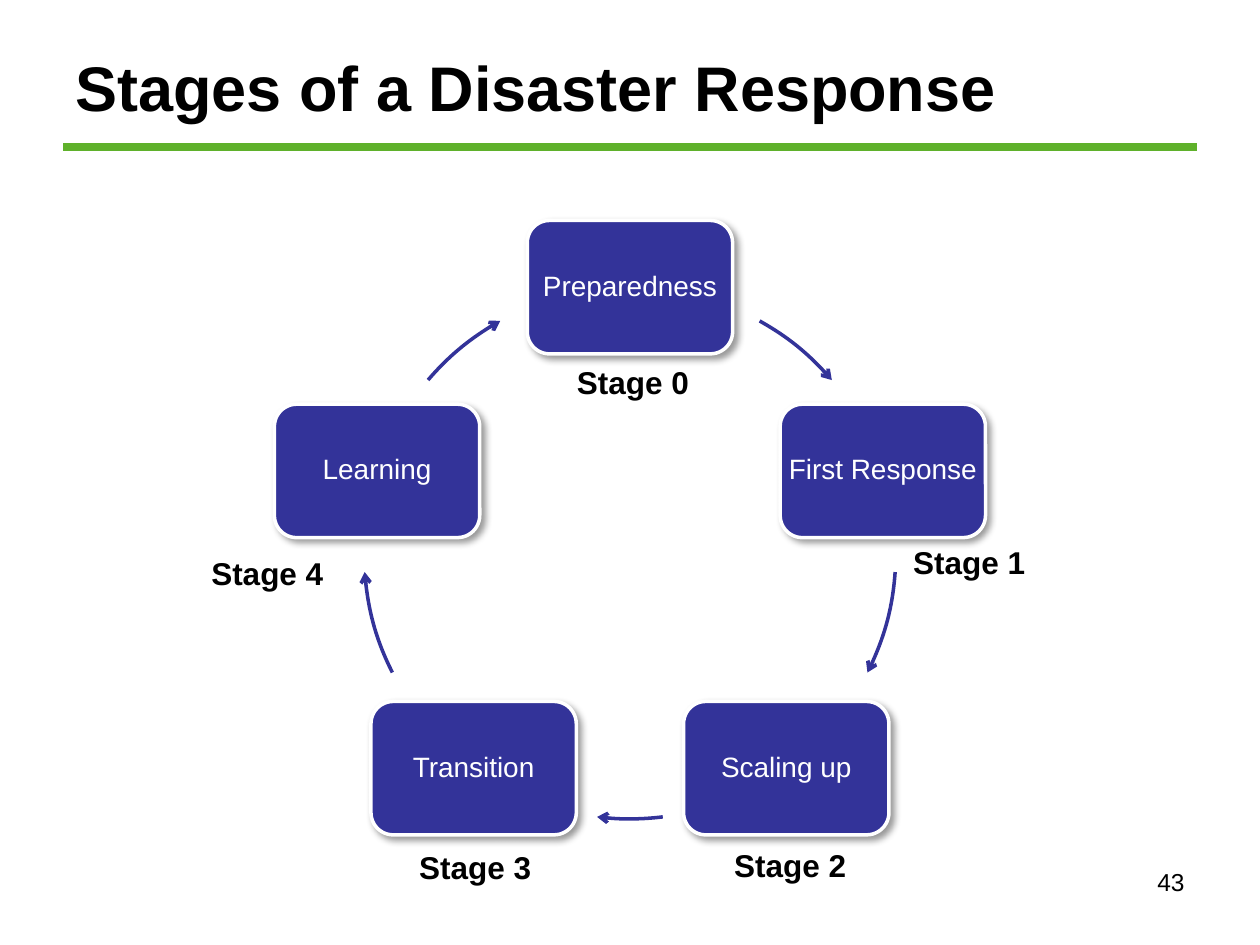
from math import cos, radians, sin

from lxml import etree
from pptx import Presentation
from pptx.dml.color import RGBColor
from pptx.enum.shapes import MSO_CONNECTOR, MSO_SHAPE
from pptx.enum.text import MSO_ANCHOR as ANCHOR, PP_ALIGN as ALIGN
from pptx.oxml import parse_xml
from pptx.oxml.ns import nsdecls, qn
from pptx.util import Cm, Pt

BLUE, GREEN, WHITE, BLACK = "333399", "5FB12B", "FFFFFF", "000000"
SHADOW = (
    f'<a:effectLst {nsdecls("a")}><a:outerShdw blurRad="{Pt(4)}" dist="{Pt(3)}" '
    'dir="2700000" rotWithShape="0"><a:srgbClr val="000000"><a:alpha val="40000"/>'
    "</a:srgbClr></a:outerShdw></a:effectLst>"
)


def rgb(color):
    return RGBColor.from_string(color)


def write(sp, text, size, color=BLACK, bold=False, align=ALIGN.LEFT):
    """Fill a shape with one Arial paragraph and return that paragraph."""
    p = sp.text_frame.paragraphs[0]
    p.text = text
    p.alignment = align
    p.font.name, p.font.size, p.font.bold = "Arial", Pt(size), bold
    p.font.color.rgb = rgb(color)
    return p


prs = Presentation()
prs.slide_width, prs.slide_height = Cm(25.4), Cm(19.05)
s = prs.slides.add_slide(prs.slide_layouts[6])

# Title and rule
title = s.shapes.add_textbox(Cm(1.27), Cm(0.76), Cm(22.66), Cm(1.98))
title.text_frame.word_wrap = True
title.text_frame.vertical_anchor = ANCHOR.MIDDLE
write(title, "Stages of a Disaster Response", 36, bold=True)

rule = s.shapes.add_connector(
    MSO_CONNECTOR.STRAIGHT, Cm(1.27), Cm(2.97), Cm(24.13), Cm(2.97))
rule.line.color.rgb = rgb(GREEN)
rule.line.width = Pt(4.5)
etree.SubElement(rule._element.spPr, qn("a:effectLst"))

# Cycle: five boxes on a circle, each followed by an arrow along it
CX, CY, RADIUS = 12.7, 11.15, 5.36
BOX_W, BOX_H = 4.14, 2.69
stages = [  # name, arrow start and end angle, label left and top
    ("Preparedness", 299.2, 319.4, 11.38, 7.19),
    ("First Response", 4.1, 26.7, 18.16, 10.82),
    ("Scaling up", 82.9, 97.1, 14.55, 16.94),
    ("Transition", 153.3, 175.9, 8.2, 16.97),
    ("Learning", 220.6, 240.8, 4.01, 11.05),
]
for i, (name, start, end, label_x, label_y) in enumerate(stages):
    angle = radians(72 * i - 90)
    x = CX + RADIUS * cos(angle) - BOX_W / 2
    y = CY + RADIUS * sin(angle) - BOX_H / 2
    box = s.shapes.add_shape(
        MSO_SHAPE.ROUNDED_RECTANGLE, Cm(x), Cm(y), Cm(BOX_W), Cm(BOX_H))
    box.fill.solid()
    box.fill.fore_color.rgb = rgb(BLUE)
    box.line.color.rgb = rgb(WHITE)
    box.line.width = Pt(2)
    box._element.spPr.append(parse_xml(SHADOW))
    tf = box.text_frame
    tf.word_wrap = False
    tf.vertical_anchor = ANCHOR.MIDDLE
    tf.margin_left = tf.margin_right = tf.margin_top = tf.margin_bottom = Cm(0.17)
    p = write(box, name, 16, WHITE, align=ALIGN.CENTER)
    p.line_spacing = 0.9

    arrow = s.shapes.add_shape(
        MSO_SHAPE.ARC, Cm(CX - RADIUS), Cm(CY - RADIUS), Cm(2 * RADIUS), Cm(2 * RADIUS))
    # Adjustments count 100000ths, arc angles 60000ths of a degree
    arrow.adjustments[0], arrow.adjustments[1] = start * 0.6, end * 0.6
    arrow.fill.background()
    arrow.line.color.rgb = rgb(BLUE)
    arrow.line.width = Pt(2)
    arrow.shadow.inherit = False
    etree.SubElement(arrow.line._get_or_add_ln(), qn("a:tailEnd"), type="arrow")

    label = s.shapes.add_textbox(Cm(label_x), Cm(label_y), Cm(2.79), Cm(1.02))
    label.text_frame.word_wrap = False
    write(label, f"Stage {i}", 18, bold=True)

number = s.shapes.add_textbox(Cm(18.21), Cm(17.35), Cm(5.92), Cm(1.32))
number.text_frame.word_wrap = True
write(number, "43", 14, align=ALIGN.RIGHT)

prs.save("out.pptx")
